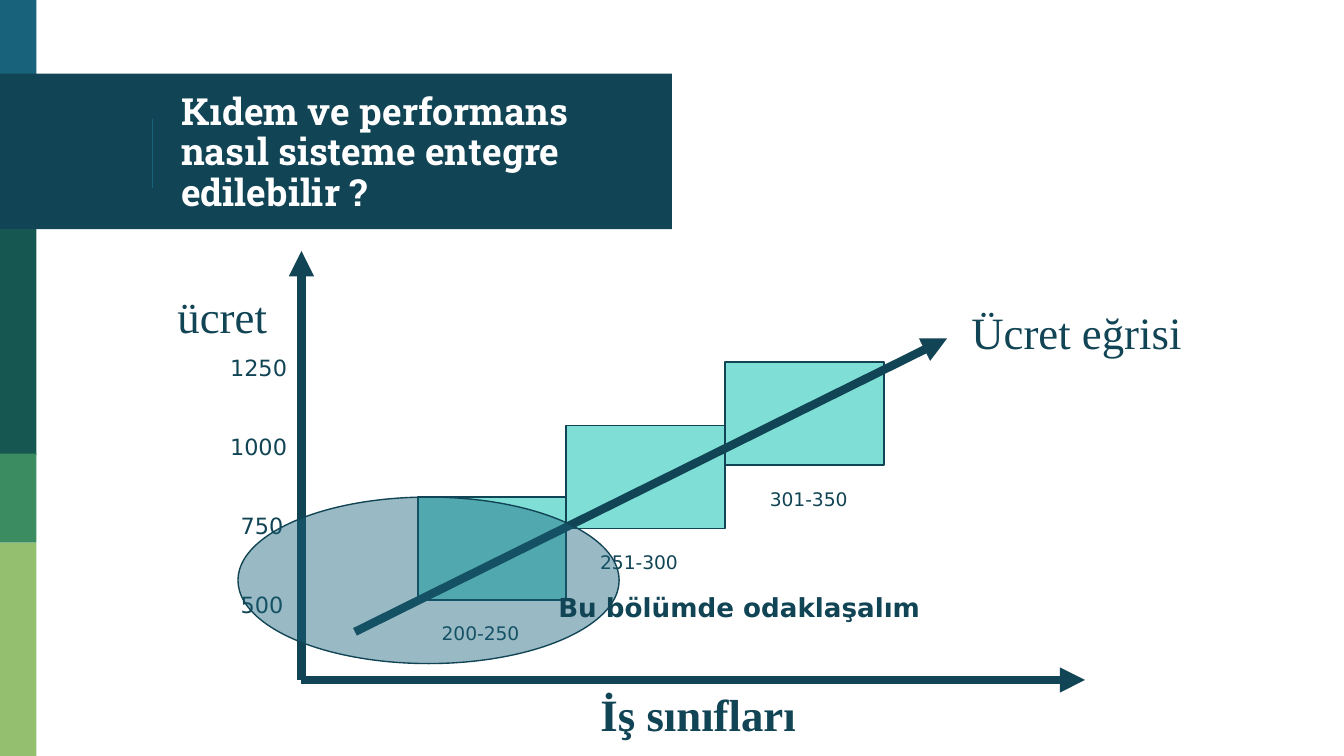
from pptx import Presentation
from pptx.dml.color import RGBColor
from pptx.enum import shapes, text
from pptx.oxml import parse_xml
from pptx.oxml.ns import nsdecls, qn
from pptx.util import Pt
from lxml import etree

NAVY = RGBColor(0x11, 0x44, 0x54)
BLUE = RGBColor(0x18, 0x63, 0x7B)
PINE = RGBColor(0x16, 0x57, 0x51)
GREEN = RGBColor(0x3B, 0x8D, 0x61)
LIME = RGBColor(0x94, 0xBF, 0x6E)
AQUA = RGBColor(0x7F, 0xDF, 0xD6)
WHITE = RGBColor(0xFF, 0xFF, 0xFF)
SERIF, SANS, SLAB = "Times New Roman", "DejaVu Sans", "Roboto Slab"

# Content: all lengths in points
TITLE = "Kıdem ve performans nasıl sisteme entegre edilebilir ?"
STRIPES = [  # top, width, height, colour
    (0, 19.5, 42, BLUE), (39.5, 360, 83.3, NAVY), (122.7, 19.5, 121, PINE),
    (243, 19.5, 47.8, GREEN), (290.8, 19.5, 114.2, LIME),
]
ORIGIN, AXIS_TOP, AXIS_RIGHT = (161.5, 364.3), 134.5, 581.3
CURVE = ((190.2, 338.5), (507.4, 181.3))
HEADINGS = [  # text, left, top, width, bold
    ("İş sınıfları", 314.6, 364.3, 209.5, True),
    ("ücret", 88, 151.4, 73.4, False),
    ("Ücret eğrisi", 513.3, 159.5, 175.7, False),
]
GRADES = [  # left, top, width of the pay box; label and its place
    (223.9, 266.3, 79.3, "200-250", 229.5, 329.8),
    (303.2, 228, 85.2, "251-300", 314.4, 291.7),
    (388.4, 194, 85.2, "301-350", 405.3, 257.6),
]
GRADE_HEIGHT = 55.2
PAY_LEVELS = ["1250", "1000", "750", "500"]
PAY_TOP, PAY_STEP = 186.4, 42.3
FOCUS = "Bu bölümde odaklaşalım"

deck = Presentation()
deck.slide_width, deck.slide_height = Pt(720), Pt(405)
page = deck.slides.add_slide(deck.slide_layouts[5])


def write(frame, words, *, size, font=SANS, color=NAVY, bold=False):
    frame.word_wrap = True
    para = frame.paragraphs[0]
    para.alignment = text.PP_ALIGN.LEFT
    span = para.add_run()
    span.text = words
    span.font.name, span.font.size = font, Pt(size)
    span.font.bold, span.font.color.rgb = bold, color


def add_label(words, left, top, width, height, **style):
    box = page.shapes.add_textbox(Pt(left), Pt(top), Pt(width), Pt(height))
    write(box.text_frame, words, **style)


def add_block(kind, left, top, width, height, fill, outlined=True):
    block = page.shapes.add_shape(kind, Pt(left), Pt(top), Pt(width), Pt(height))
    block.shadow.inherit = False
    block.fill.solid()
    block.fill.fore_color.rgb = fill
    if outlined:
        block.line.color.rgb, block.line.width = NAVY, Pt(0.75)
    else:
        block.line.fill.background()
    return block


def add_line(start, end, color=NAVY, width=4.5, arrow=True):
    line = page.shapes.add_connector(
        shapes.MSO_CONNECTOR.STRAIGHT, *map(Pt, start + end))
    line.line.color.rgb, line.line.width = color, Pt(width)
    if arrow:
        line.line._get_or_add_ln().append(
            parse_xml(f'<a:tailEnd {nsdecls("a")} type="triangle"/>'))
    etree.SubElement(line.element.spPr, qn("a:effectLst"))
    return line


# Side stripes and title band
RECT = shapes.MSO_SHAPE.RECTANGLE
for top, width, height, color in STRIPES:
    add_block(RECT, 0, top, width, height, color, outlined=False)
divider = add_line((81.6, 64), (81.6, 100.8), BLUE, 0.75, arrow=False)

# Title, placed in front of its band
title = page.shapes.title
title.left, title.top, title.width, title.height = map(Pt, (89.8, 42, 252.8, 80.7))
frame = title.text_frame
frame.auto_size = text.MSO_AUTO_SIZE.NONE
frame.vertical_anchor = text.MSO_ANCHOR.MIDDLE
frame.margin_left = frame.margin_right = Pt(7.2)
frame.margin_top = frame.margin_bottom = Pt(7.2)
write(frame, TITLE, size=20, font=SLAB, color=WHITE, bold=True)
frame.paragraphs[0].line_spacing = 0.9
divider.element.addnext(title.element)

# Axes and their names
add_line(ORIGIN, (ORIGIN[0], AXIS_TOP))
add_line(ORIGIN, (AXIS_RIGHT, ORIGIN[1]))
for words, left, top, width, bold in HEADINGS:
    add_label(words, left, top, width, 36, size=24, font=SERIF, bold=bold)

# Pay boxes, the wage curve over them, then the grade labels
for left, top, width, *_ in GRADES:
    add_block(RECT, left, top, width, GRADE_HEIGHT, AQUA)
add_line(*CURVE)
for *_, words, left, top in GRADES:
    add_label(words, left, top, 62.4, 19.4, size=10)

# Pay scale, with three-digit figures set in
for row, words in enumerate(PAY_LEVELS):
    left = 116.2 if len(words) == 4 else 121.9
    add_label(words, left, PAY_TOP + row * PAY_STEP, 90.7, 21.8, size=12)

# Focus area: translucent ellipse and its note
focus = add_block(shapes.MSO_SHAPE.OVAL, 127.5, 266.3, 204.2, 89.2, BLUE)
tint = focus.element.spPr.find(qn("a:solidFill"))[0]
etree.SubElement(tint, qn("a:alpha"), val="44000")
add_label(FOCUS, 292, 313.4, 300.5, 24.2, size=14, bold=True)

deck.save("out.pptx")
